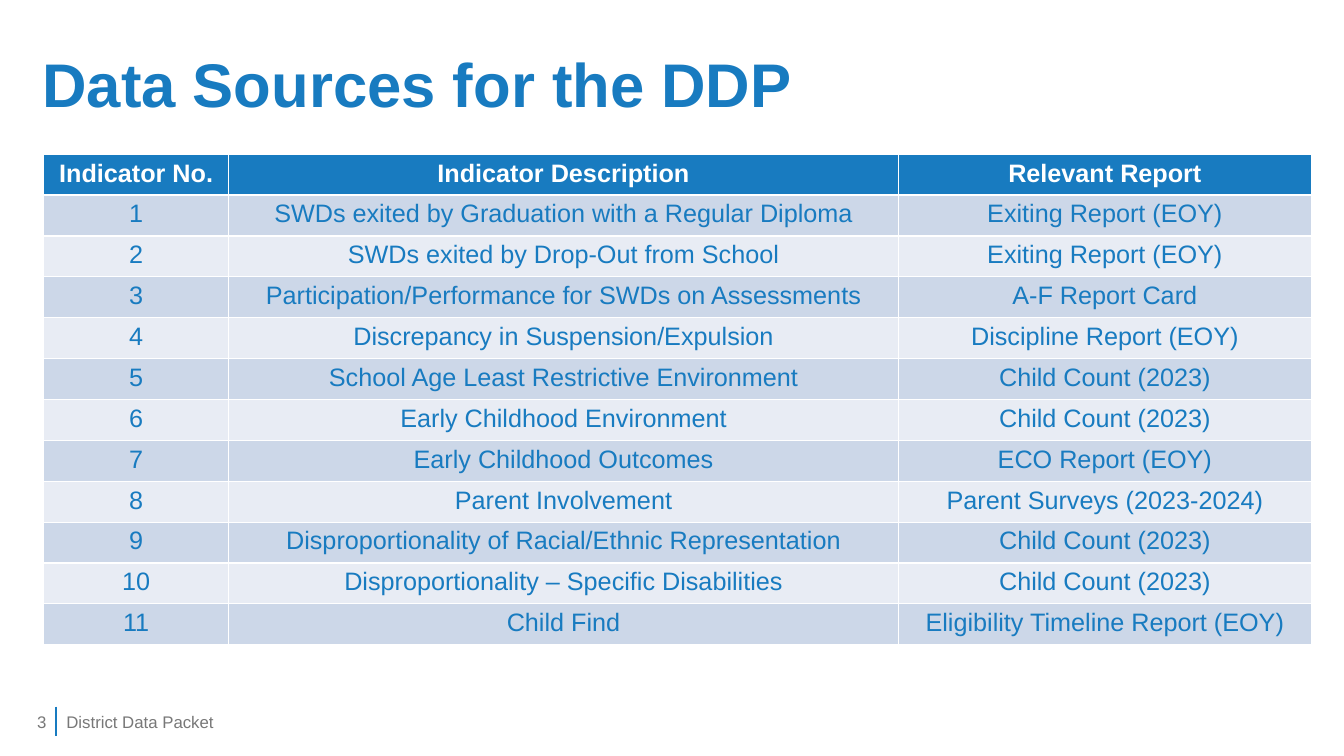
from dataclasses import dataclass

import pptx
import pptx.dml.color
import pptx.enum.shapes
import pptx.enum.text
import pptx.oxml.ns
import pptx.util
from lxml import etree

ALIGN = pptx.enum.text.PP_ALIGN
MIDDLE = pptx.enum.text.MSO_ANCHOR.MIDDLE


@dataclass(frozen=True)
class Theme:
    font: str = "Arial"
    blue: str = "187BC0"
    white: str = "FFFFFF"
    gray: str = "787878"
    bands: tuple = ("CCD7E8", "E8ECF4")
    title_size: int = 44
    table_size: int = 18
    footer_size: int = 12


def rgb(value):
    return pptx.dml.color.RGBColor.from_string(value)


class SlideBuilder:
    """Places elements on a grid of 100 columns by 100 rows."""

    def __init__(self, presentation, theme):
        self.theme = theme
        self.column = presentation.slide_width / 100
        self.row = presentation.slide_height / 100
        self.slide = presentation.slides.add_slide(presentation.slide_layouts[5])

    def box(self, left, top, width, height):
        return (round(left * self.column), round(top * self.row),
                round(width * self.column), round(height * self.row))

    def set_text(self, text_frame, text, size, color, bold=False, align=ALIGN.LEFT):
        text_frame.text = text
        paragraph = text_frame.paragraphs[0]
        paragraph.alignment = align
        font = paragraph.font
        font.name, font.size, font.bold = self.theme.font, pptx.util.Pt(size), bold
        font.color.rgb = rgb(color)
        return paragraph

    def title(self, text, *area):
        title = self.slide.shapes.title
        title.left, title.top, title.width, title.height = self.box(*area)
        title.text_frame.vertical_anchor = MIDDLE
        paragraph = self.set_text(title.text_frame, text, self.theme.title_size,
                                  self.theme.blue, bold=True)
        paragraph.line_spacing = 0.9

    def footer(self, text, *area, align=ALIGN.LEFT):
        text_frame = self.slide.shapes.add_textbox(*self.box(*area)).text_frame
        text_frame.word_wrap = True
        text_frame.vertical_anchor = MIDDLE
        self.set_text(text_frame, text, self.theme.footer_size, self.theme.gray, align=align)

    def vertical_line(self, left, top, bottom):
        x, start, _, end = self.box(left, top, 0, bottom)
        line = self.slide.shapes.add_connector(
            pptx.enum.shapes.MSO_CONNECTOR.STRAIGHT, x, start, x, end)
        line.line.color.rgb = rgb(self.theme.blue)
        line.line.width = pptx.util.Pt(1.5)
        etree.SubElement(line._element.spPr, pptx.oxml.ns.qn("a:effectLst"))

    def table(self, records, left, top, column_widths, row_height):
        """Draw a header row and banded body rows; the table style adds white borders."""
        area = self.box(left, top, sum(column_widths), row_height * len(records))
        table = self.slide.shapes.add_table(len(records), len(column_widths), *area).table
        for column, width in zip(table.columns, column_widths):
            column.width = round(width * self.column)
        for index, (row, record) in enumerate(zip(table.rows, records)):
            row.height = round(row_height * self.row)
            header = index == 0
            fill = self.theme.blue if header else self.theme.bands[(index - 1) % 2]
            color = self.theme.white if header else self.theme.blue
            for cell, text in zip(row.cells, record):
                cell.fill.solid()
                cell.fill.fore_color.rgb = rgb(fill)
                self.set_text(cell.text_frame, text, self.theme.table_size, color,
                              bold=header, align=ALIGN.CENTER)


HEADER = ("Indicator No.", "Indicator Description", "Relevant Report")
INDICATORS = [
    ("SWDs exited by Graduation with a Regular Diploma", "Exiting Report (EOY)"),
    ("SWDs exited by Drop-Out from School", "Exiting Report (EOY)"),
    ("Participation/Performance for SWDs on Assessments", "A-F Report Card"),
    ("Discrepancy in Suspension/Expulsion", "Discipline Report (EOY)"),
    ("School Age Least Restrictive Environment", "Child Count (2023)"),
    ("Early Childhood Environment", "Child Count (2023)"),
    ("Early Childhood Outcomes", "ECO Report (EOY)"),
    ("Parent Involvement", "Parent Surveys (2023-2024)"),
    ("Disproportionality of Racial/Ethnic Representation", "Child Count (2023)"),
    ("Disproportionality – Specific Disabilities", "Child Count (2023)"),
    ("Child Find", "Eligibility Timeline Report (EOY)"),
]


def main():
    presentation = pptx.Presentation()
    presentation.slide_width = pptx.util.Inches(13.33)
    presentation.slide_height = pptx.util.Inches(7.5)

    builder = SlideBuilder(presentation, Theme())
    builder.vertical_line(4.2, 93.47, 97.33)
    builder.title("Data Sources for the DDP", 2.4, 1.87, 95.2, 19.33)
    builder.footer("District Data Packet", 4.2, 92.8, 48.9, 5.33)
    builder.footer("3", 0, 92.8, 4.2, 5.33, align=ALIGN.RIGHT)
    records = [HEADER] + [(str(number), *indicator)
                          for number, indicator in enumerate(INDICATORS, 1)]
    builder.table(records, 3.23, 20.4, (13.8, 49.8, 30.76), 5.41)

    presentation.save("out.pptx")


if __name__ == "__main__":
    main()
